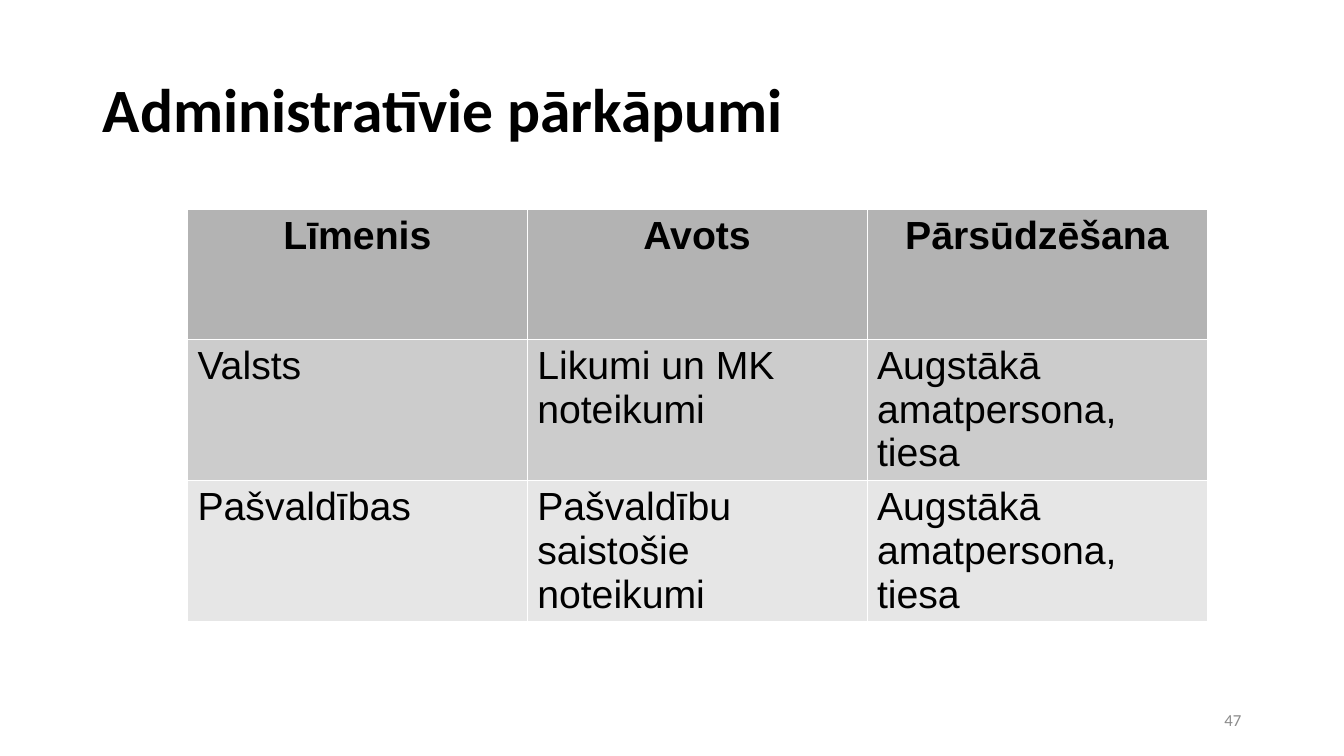
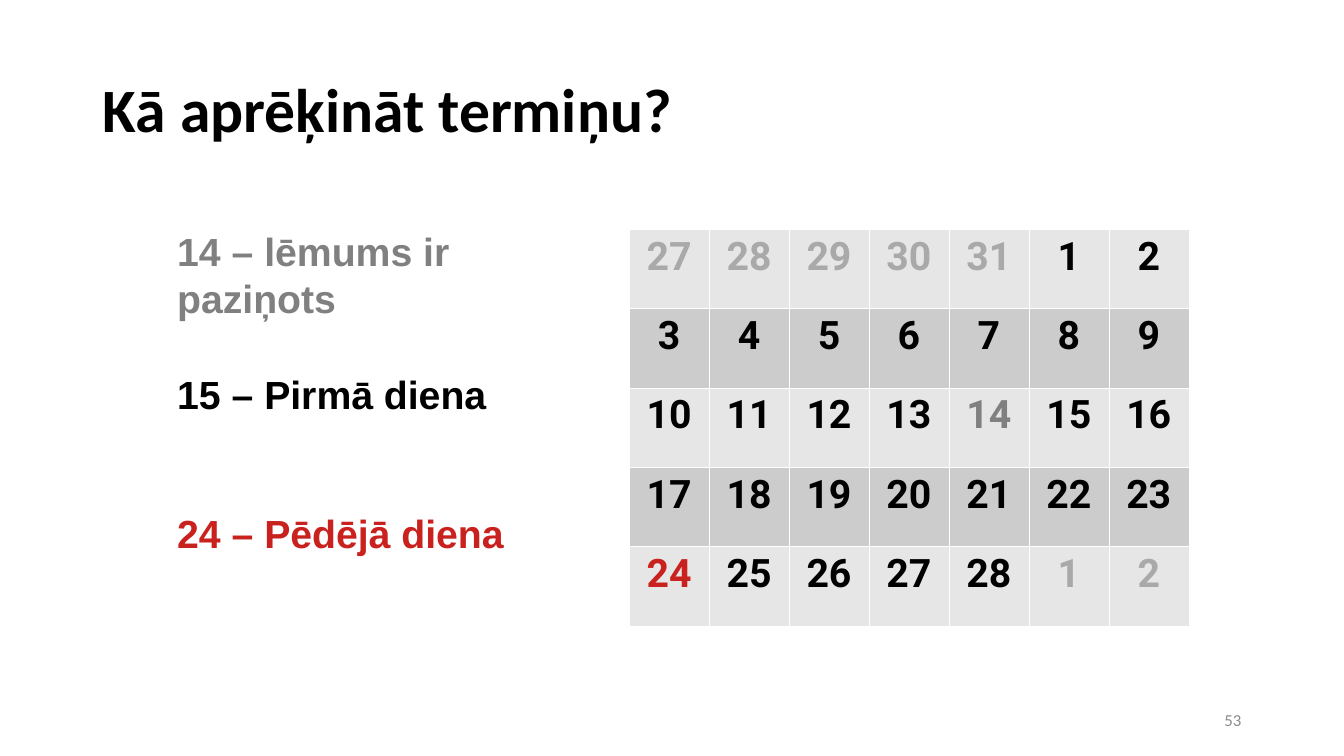
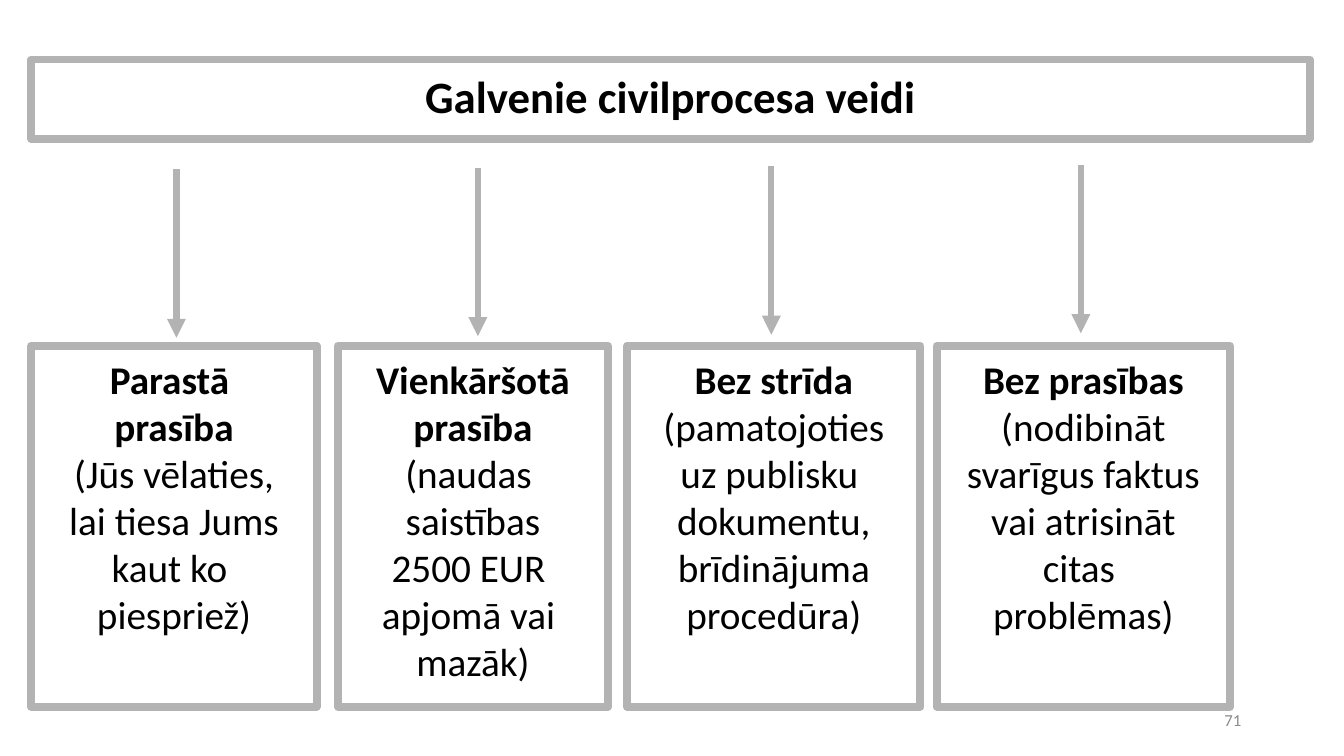
"""Build three slides on administrative offences, deadlines and civil procedure."""
import pptx
import pptx.dml.color
import pptx.enum.dml
import pptx.enum.shapes
import pptx.enum.text
import pptx.oxml
import pptx.oxml.ns
import pptx.util

COLOURS = {
    "ink": "000000", "paper": "FFFFFF", "number": "8B8B8B", "frame": "B3B3B3",
    "dark band": "CCCCCC", "light band": "E6E6E6", "outside": "A9A9A9",
    "notice": "808080", "deadline": "C9211E",
}
WIDTH, HEIGHT = pptx.util.Inches(13.33), pptx.util.Inches(7.5)
ALIGN = pptx.enum.text.PP_ALIGN
ANCHOR = pptx.enum.text.MSO_ANCHOR
NO_FIT = pptx.enum.text.MSO_AUTO_SIZE.NONE

TITLE_FONT = {"name": "Calibri", "size": pptx.util.Pt(44), "bold": True}
NUMBER_FONT = {"name": "Calibri", "size": pptx.util.Pt(12), "bold": False}
BANNER_FONT = {"name": "Calibri", "size": pptx.util.Pt(32), "bold": True}
BOX_FONT = {"name": "Calibri", "size": pptx.util.Pt(28)}
TEXT_FONT = {"name": "Arial", "size": pptx.util.Pt(28)}
DAY_FONT = {"name": "Roboto", "size": pptx.util.Pt(28), "bold": True}

PLAIN_FRAME = {"word_wrap": True, "auto_size": NO_FIT}
TITLE_FRAME = {**PLAIN_FRAME, "vertical_anchor": ANCHOR.MIDDLE}
BOX_FRAME = {
    "word_wrap": False, "auto_size": NO_FIT, "vertical_anchor": ANCHOR.TOP,
    "margin_left": pptx.util.Inches(0.14), "margin_right": pptx.util.Inches(0.14),
    "margin_top": pptx.util.Inches(0.09), "margin_bottom": pptx.util.Inches(0.09),
}
BANNER_FRAME = {**BOX_FRAME, "vertical_anchor": ANCHOR.MIDDLE}

LEVELS = [
    ["Līmenis", "Avots", "Pārsūdzēšana"],
    ["Valsts", "Likumi un MK noteikumi", "Augstākā amatpersona, tiesa"],
    ["Pašvaldības", "Pašvaldību saistošie noteikumi", "Augstākā amatpersona, tiesa"],
]
NOTES = [
    ("14 – lēmums ir paziņots", "notice", 29.47, 13.73),
    ("15 – Pirmā diena", "ink", 48.27, 7.47),
    ("24 – Pēdējā diena", "deadline", 66.67, 7.47),
]
PROCEDURES = [
    (2.33, 21.23, 13.13, ["Parastā ", "prasība"],
     ["(Jūs vēlaties,", "lai tiesa Jums", "kaut ko ", "piespriež)"]),
    (25.13, 20.11, 35.56, ["Vienkāršotā", "prasība"],
     ["(naudas ", "saistības", "2500 EUR ", "apjomā vai ", "mazāk)"]),
    (46.66, 21.83, 57.39, ["Bez strīda"],
     ["(pamatojoties", "uz publisku ", "dokumentu,", "brīdinājuma", "procedūra)"]),
    (69.69, 21.83, 80.42, ["Bez prasības"],
     ["(nodibināt", "svarīgus faktus", "vai atrisināt", "citas ", "problēmas)"]),
]


def rgb(colour):
    """Return a named colour."""
    return pptx.dml.color.RGBColor.from_string(COLOURS[colour])


def across(share):
    """Turn a percentage of the slide's width into a length."""
    return round(WIDTH * share / 100)


def down(share):
    """Turn a percentage of the slide's height into a length."""
    return round(HEIGHT * share / 100)


def place(left, top, width, height):
    """Turn percentages into left, top, width and height."""
    return across(left), down(top), across(width), down(height)


def set_all(target, values):
    """Set each attribute named in a dict."""
    for name, value in values.items():
        setattr(target, name, value)


def write(frame, lines, font, colour="ink", align=ALIGN.LEFT, bold_lines=None):
    """Write one paragraph a line, the first few bold where a count is given."""
    for index, line in enumerate(lines):
        para = frame.add_paragraph() if index else frame.paragraphs[0]
        para.alignment = align
        span = para.add_run()
        span.text = line
        set_all(span.font, font)
        span.font.color.rgb = rgb(colour)
        if bold_lines is not None:
            span.font.bold = index < bold_lines


def outline(shape):
    """Give a shape the thick grey frame."""
    shape.line.color.rgb = rgb("frame")
    shape.line.width = pptx.util.Pt(5.67)


def add_text(page, at, text, font, colour="ink", align=ALIGN.LEFT, frame_format=PLAIN_FRAME):
    """Add a text box of one paragraph."""
    frame = page.shapes.add_textbox(*place(*at)).text_frame
    set_all(frame, frame_format)
    write(frame, [text], font, colour, align)


def add_page(deck, number):
    """Add a title-only slide with its page number."""
    page = deck.slides.add_slide(deck.slide_layouts[5])
    add_text(page, (70.67, 92.67, 22.43, 5.2), number, NUMBER_FONT, "number",
             ALIGN.RIGHT, TITLE_FRAME)
    return page


def set_title(page, text, at=(6.9, 5.33, 86.2, 19.2), font=TITLE_FONT,
              align=ALIGN.LEFT, frame_format=TITLE_FRAME):
    """Place and fill the title placeholder."""
    title = page.shapes.title
    set_all(title, dict(zip(("left", "top", "width", "height"), place(*at))))
    set_all(title.text_frame, frame_format)
    write(title.text_frame, [text], font, align=align)
    title.text_frame.paragraphs[0].line_spacing = 0.9
    return title


def fill_cell(cell, colour):
    """Give a cell thin white borders and a fill."""
    properties = cell._tc.get_or_add_tcPr()
    for side in ("lnL", "lnR", "lnT", "lnB"):
        properties.append(pptx.oxml.parse_xml(
            f'<a:{side} {pptx.oxml.ns.nsdecls("a")} w="{pptx.util.Pt(0.06)}"><a:solidFill>'
            f'<a:srgbClr val="{COLOURS["paper"]}"/></a:solidFill></a:{side}>'))
    cell.fill.solid()
    cell.fill.fore_color.rgb = rgb(colour)


def add_grid(page, at, rows, bands, cell_style):
    """Add a table with a fill for each row and a text style for each cell."""
    table = page.shapes.add_table(len(rows), len(rows[0]), *place(*at)).table
    set_all(table, {"first_row": False, "horz_banding": False})
    for row, (texts, band) in enumerate(zip(rows, bands)):
        for column, text in enumerate(texts):
            cell = table.cell(row, column)
            fill_cell(cell, band)
            write(cell.text_frame, [text], **cell_style(row, column))


def level_style(row, column):
    """Style the heading row apart from the rest."""
    heading = row == 0
    return {"font": {**TEXT_FONT, "bold": heading},
            "align": ALIGN.CENTER if heading else ALIGN.LEFT}


def day_style(row, column):
    """Colour a calendar day by its place in the month."""
    day = row * 7 + column - 4
    colour = {14: "notice", 24: "deadline"}.get(day, "ink" if 1 <= day <= 28 else "outside")
    return {"font": DAY_FONT, "colour": colour, "align": ALIGN.CENTER}


def add_box(page, at, heading, detail):
    """Add a framed box with a bold heading."""
    box = page.shapes.add_shape(pptx.enum.shapes.MSO_SHAPE.RECTANGLE, *place(*at))
    box.shadow.inherit = False
    box.fill.background()
    outline(box)
    set_all(box.text_frame, BOX_FRAME)
    write(box.text_frame, heading + detail, BOX_FONT, align=ALIGN.CENTER,
          bold_lines=len(heading))


def add_arrow(page, left, top, length):
    """Add an arrow pointing down."""
    arrow = page.shapes.add_connector(
        pptx.enum.shapes.MSO_CONNECTOR.STRAIGHT,
        across(left), down(top), across(left), down(top + length))
    arrow.line.color.rgb = rgb("frame")
    arrow.line.width = pptx.util.Pt(4.5)
    namespace = pptx.oxml.ns.nsdecls("a")
    arrow.line._get_or_add_ln().append(
        pptx.oxml.parse_xml(f'<a:tailEnd {namespace} type="triangle"/>'))
    arrow._element.spPr.append(pptx.oxml.parse_xml(f"<a:effectLst {namespace}/>"))


def build_levels(deck):
    """Build the table of levels, sources and appeals."""
    page = add_page(deck, "47")
    set_title(page, "Administratīvie pārkāpumi")
    add_grid(page, (13.95, 27.6, 75.84, 51.73), LEVELS,
             ["frame", "dark band", "light band"], level_style)


def build_calendar(deck):
    """Build the calendar with its three notes."""
    page = add_page(deck, "53")
    set_title(page, "Kā aprēķināt termiņu?")
    days = [str(day) for day in [*range(27, 32), *range(1, 29), 1, 2]]
    weeks = [days[start:start + 7] for start in range(0, len(days), 7)]
    bands = [("light band", "dark band")[week % 2] for week in range(len(weeks))]
    add_grid(page, (46.81, 30.27, 41.64, 52.53), weeks, bands, day_style)
    for text, colour, top, height in NOTES:
        add_text(page, (12.45, top, 30.38, height), text, {**TEXT_FONT, "bold": True}, colour)


def build_procedures(deck):
    """Build the banner with an arrow to each kind of procedure."""
    page = add_page(deck, "71")
    outline(set_title(page, "Galvenie civilprocesa veidi", (2.33, 7.87, 95.12, 10.53),
                      BANNER_FONT, ALIGN.CENTER, BANNER_FRAME))
    for index, (left, width, arrow_left, heading, detail) in enumerate(PROCEDURES):
        add_box(page, (left, 45.73, width, 47.73), heading, detail)
        add_arrow(page, arrow_left, 22.4 - 0.2 * index, 22.27)


def main():
    """Build and save the deck."""
    deck = pptx.Presentation()
    set_all(deck, {"slide_width": WIDTH, "slide_height": HEIGHT})
    for build in (build_levels, build_calendar, build_procedures):
        build(deck)
    deck.save("out.pptx")


if __name__ == "__main__":
    main()
